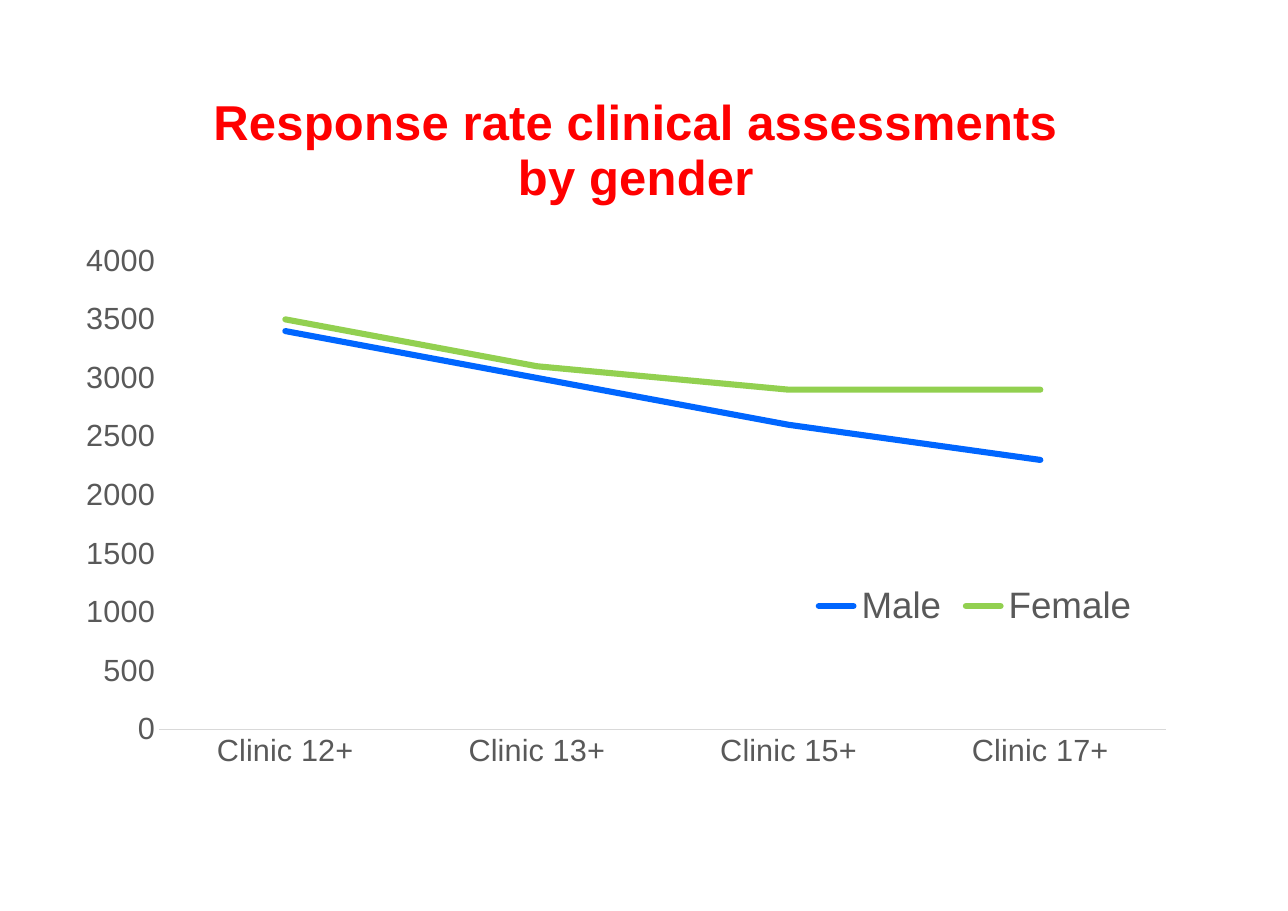
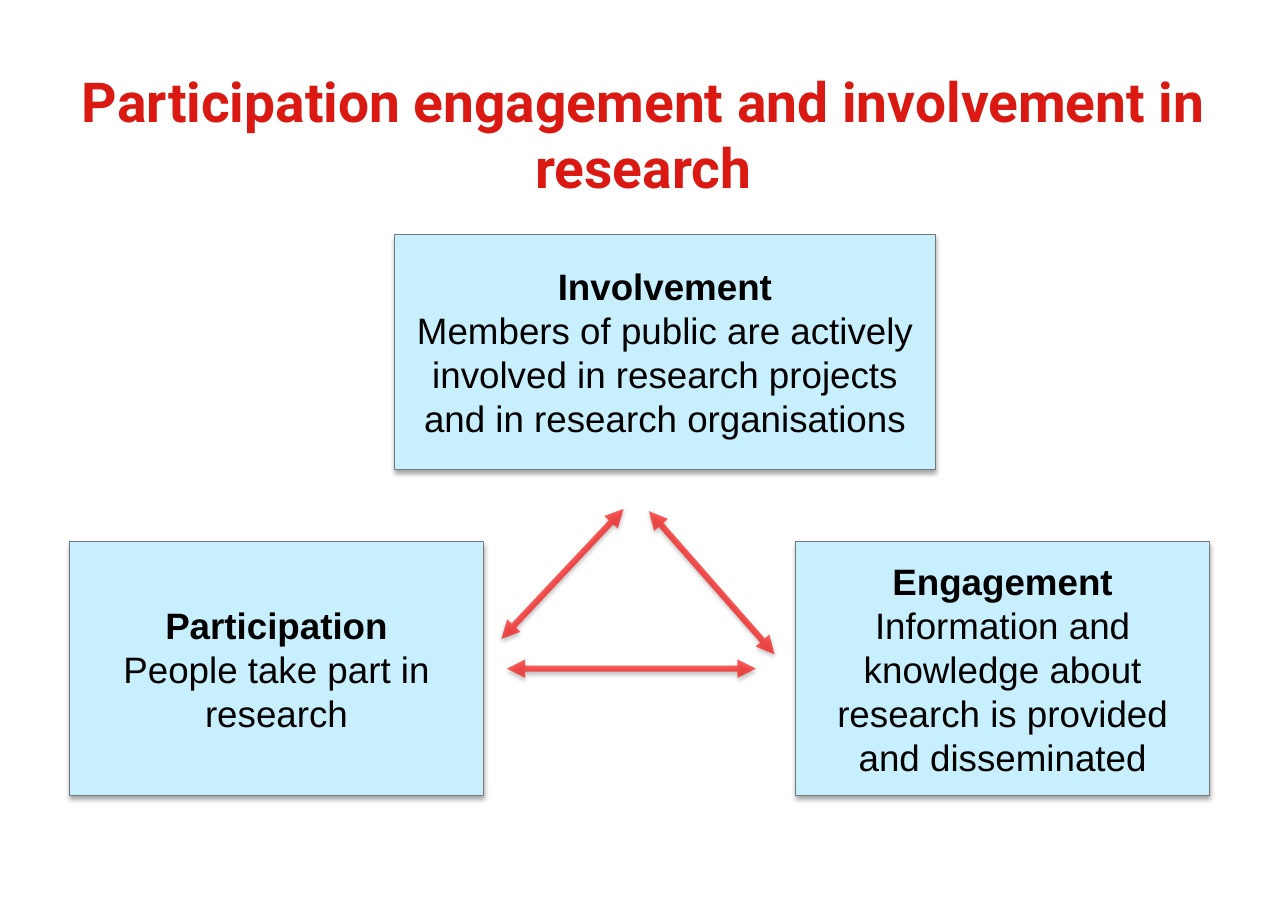
import pptx
import pptx.chart.data
import pptx.dml.color
import pptx.enum.chart
import pptx.enum.dml
import pptx.enum.shapes
import pptx.enum.text
import pptx.oxml
import pptx.oxml.ns
import pptx.util
from lxml import etree

Inches = pptx.util.Inches
Pt = pptx.util.Pt
RGBColor = pptx.dml.color.RGBColor
qn = pptx.oxml.ns.qn

# Shared colours and fonts
BLACK = RGBColor(0x00, 0x00, 0x00)
RED = RGBColor(0xFF, 0x00, 0x00)
TITLE_RED = RGBColor(0xDB, 0x19, 0x13)
PALE_BLUE = RGBColor(0xC8, 0xEF, 0xFD)
BOX_EDGE = RGBColor(0x76, 0x78, 0x7B)
AXIS_TEXT = RGBColor(0x59, 0x59, 0x59)
AXIS_LINE = RGBColor(0xD9, 0xD9, 0xD9)
MALE_BLUE = RGBColor(0x00, 0x66, 0xFF)
FEMALE_GREEN = RGBColor(0x92, 0xD0, 0x50)
BODY_FONT = "Arial"
TITLE_FONT = "Roboto"


def set_font(font, size, color, name=BODY_FONT, bold=False):
    font.size = Pt(size)
    font.name = name
    font.bold = bold
    font.color.rgb = color


def write_line(tf, text, first=False, **style):
    """Write one centred paragraph into a text frame."""
    p = tf.paragraphs[0] if first else tf.add_paragraph()
    p.alignment = pptx.enum.text.PP_ALIGN.CENTER
    r = p.add_run()
    r.text = text
    set_font(r.font, **style)


def add_shadow(sp, alpha):
    """Give a shape or connector a soft shadow straight below it."""
    effects = etree.SubElement(sp._element.spPr, qn("a:effectLst"))
    shadow = etree.SubElement(
        effects, qn("a:outerShdw"), blurRad=str(Pt(3.1)), dist=str(Pt(1.8)),
        dir="5400000", rotWithShape="0")
    color = etree.SubElement(shadow, qn("a:srgbClr"), val=str(BLACK))
    etree.SubElement(color, qn("a:alpha"), val=str(alpha * 1000))


def set_layout(element, index, inner=False, **place):
    """Place a chart part by fractions of the chart area."""
    for old in element.findall(qn("c:layout")):
        element.remove(old)
    layout = etree.Element(qn("c:layout"))
    manual = etree.SubElement(layout, qn("c:manualLayout"))
    if inner:
        etree.SubElement(manual, qn("c:layoutTarget"), val="inner")
    for side in ("x", "y"):
        etree.SubElement(manual, qn(f"c:{side}Mode"), val="edge")
    for key, value in place.items():
        etree.SubElement(manual, qn(f"c:{key}"), val=str(value))
    element.insert(index, layout)


def add_line_chart(slide, box, title_lines, categories, series):
    data = pptx.chart.data.CategoryChartData()
    data.categories = categories
    for name, values, _ in series:
        data.add_series(name, values)
    chart = slide.shapes.add_chart(
        pptx.enum.chart.XL_CHART_TYPE.LINE, *map(Inches, box), data).chart
    set_font(chart.font, 10, BLACK)

    # Title
    chart.has_title = True
    for i, line in enumerate(title_lines):
        write_line(chart.chart_title.text_frame, line, first=i == 0,
                   size=32, color=RED, bold=True)
    set_layout(chart.chart_title._element, 1, x=0.13, y=0.03)

    # Axes
    for axis in (chart.category_axis, chart.value_axis):
        axis.has_major_gridlines = False
        axis.major_tick_mark = pptx.enum.chart.XL_TICK_MARK.NONE
        axis.minor_tick_mark = pptx.enum.chart.XL_TICK_MARK.NONE
        set_font(axis.tick_labels.font, 20, AXIS_TEXT)
    chart.category_axis.format.line.color.rgb = AXIS_LINE
    chart.category_axis.format.line.width = Pt(0.75)
    chart.value_axis.format.line.fill.background()
    chart.value_axis.minimum_scale = 0
    chart.value_axis.maximum_scale = 4000
    chart.value_axis.major_unit = 500

    # Series
    plot = chart.plots[0]
    plot.vary_by_categories = False
    for ser, (_, _, color) in zip(plot.series, series):
        ser.smooth = False
        ser.marker.style = pptx.enum.chart.XL_MARKER_STYLE.NONE
        ser.format.line.color.rgb = color
        ser.format.line.width = Pt(4)
        ser.format.line._get_or_add_ln().set("cap", "rnd")

    # Legend and plot area
    chart.has_legend = True
    legend = chart.legend
    legend.position = pptx.enum.chart.XL_LEGEND_POSITION.BOTTOM
    legend.include_in_layout = False
    set_font(legend.font, 24, AXIS_TEXT)
    set_layout(legend._element, 1, x=0.66, y=0.65, w=0.3, h=0.08)
    plot_area = chart._chartSpace.find(".//" + qn("c:plotArea"))
    set_layout(plot_area, 0, inner=True, x=0.085, y=0.248, w=0.895, h=0.6)


def add_title(slide, text):
    sp = slide.shapes.add_textbox(*map(Inches, (0.58, 0.6, 10.52, 1.23)))
    tf = sp.text_frame
    tf.word_wrap = True
    tf.vertical_anchor = pptx.enum.text.MSO_ANCHOR.MIDDLE
    tf.margin_left = tf.margin_right = Inches(0.11)
    tf.margin_top = tf.margin_bottom = Inches(0.06)
    write_line(tf, text, first=True, size=36, color=TITLE_RED,
               name=TITLE_FONT, bold=True)


def add_box(slide, box, heading, body):
    sp = slide.shapes.add_shape(
        pptx.enum.shapes.MSO_SHAPE.RECTANGLE, *map(Inches, box))
    sp.fill.solid()
    sp.fill.fore_color.rgb = PALE_BLUE
    sp.line.color.rgb = BOX_EDGE
    sp.line.width = Pt(0.75)
    add_shadow(sp, 35)
    tf = sp.text_frame
    tf.word_wrap = True
    tf.vertical_anchor = pptx.enum.text.MSO_ANCHOR.MIDDLE
    write_line(tf, heading, first=True, size=24, color=BLACK, bold=True)
    write_line(tf, body, size=24, color=BLACK)


def add_double_arrow(slide, start, end):
    sp = slide.shapes.add_connector(
        pptx.enum.shapes.MSO_CONNECTOR.STRAIGHT, *map(Inches, start + end))
    sp.line.color.rgb = RED
    sp.line.width = Pt(4)
    ln = sp.line._get_or_add_ln()
    color = ln.find(".//" + qn("a:srgbClr"))
    etree.SubElement(color, qn("a:alpha"), val="63000")
    for tip in ("a:headEnd", "a:tailEnd"):
        etree.SubElement(ln, qn(tip), type="triangle")
    add_shadow(sp, 38)


def build_response_slide(slide):
    add_line_chart(
        slide, (0.58, 0.61, 10.21, 7.09),
        ["Response rate clinical assessments", "by gender"],
        [f"Clinic {age}+" for age in (12, 13, 15, 17)],
        [("Male", (3400, 3000, 2600, 2300), MALE_BLUE),
         ("Female", (3500, 3100, 2900, 2900), FEMALE_GREEN)])


def build_participation_slide(slide):
    # Boxes
    add_box(slide, (3.58, 2.13, 4.91, 2.13), "Involvement",
            "Members of public are actively involved in research projects "
            "and in research organisations")
    lower_boxes = [
        (0.63, "Participation", "People take part in research"),
        (7.22, "Engagement", "Information and knowledge about research is "
                             "provided and disseminated")]
    for left, heading, body in lower_boxes:
        add_box(slide, (left, 4.92, 3.76, 2.3), heading, body)

    # Arrows between the boxes
    for start, end in [((4.55, 5.8), (5.66, 4.62)),
                       ((7.03, 5.94), (5.89, 4.64)),
                       ((6.86, 6.07), (4.6, 6.07))]:
        add_double_arrow(slide, start, end)

    add_title(slide, "Participation engagement and involvement in research")


def main():
    prs = pptx.Presentation()
    prs.slide_width = Inches(11.69)
    prs.slide_height = Inches(8.27)
    for build in (build_response_slide, build_participation_slide):
        build(prs.slides.add_slide(prs.slide_layouts[6]))
    prs.save("out.pptx")


if __name__ == "__main__":
    main()
